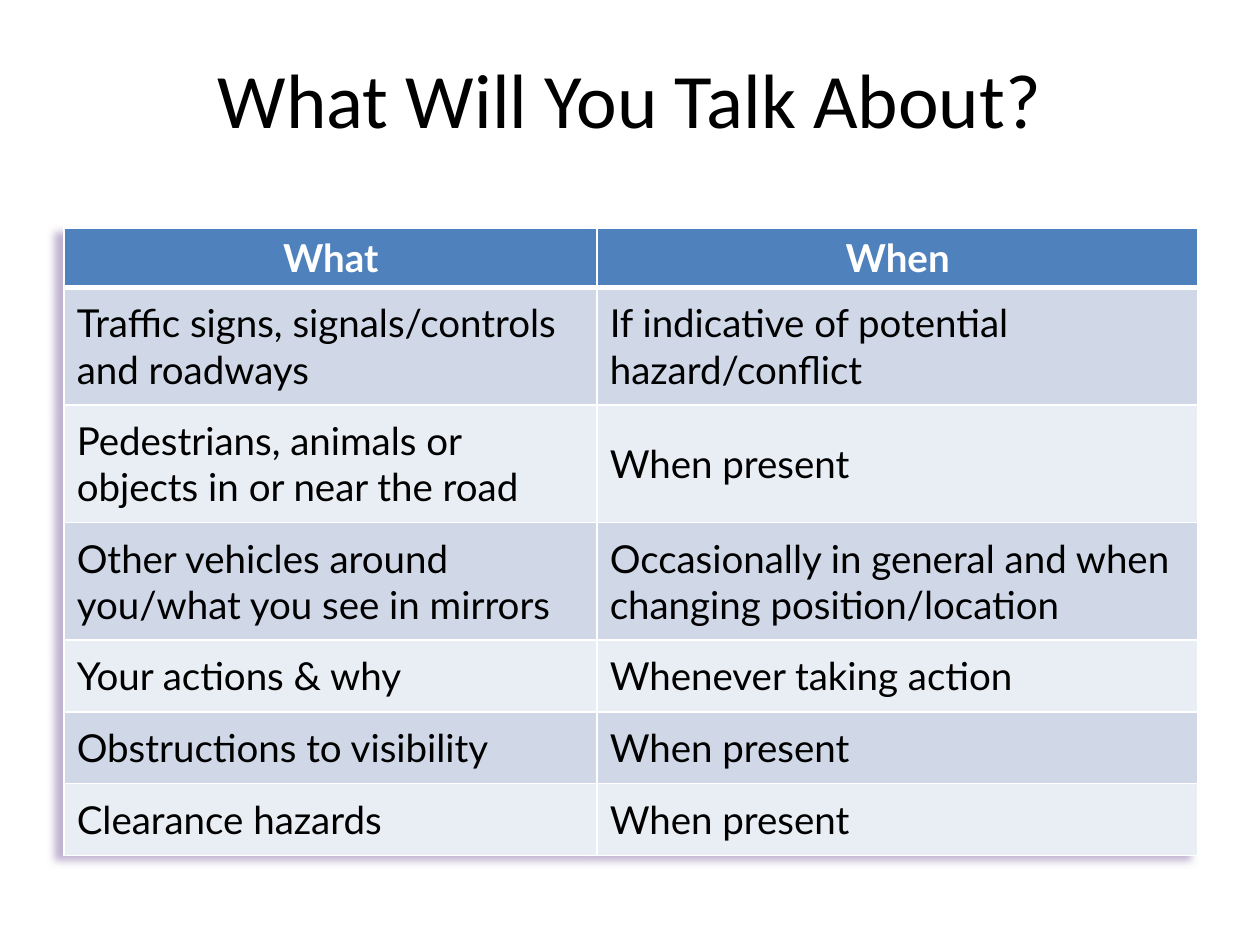
from dataclasses import dataclass

from lxml import etree
from pptx import Presentation
from pptx import util as u
from pptx.dml.color import RGBColor
from pptx.enum import text
from pptx.oxml.ns import qn


@dataclass(frozen=True)
class Theme:
    black: str = "000000"
    white: str = "FFFFFF"
    header: str = "4F81BD"
    bands: tuple = ("D0D8E8", "E9EDF4")
    shadow: str = "8064A2"
    title_font: str = "Calibri"
    body_font: str = "Lato"
    title_size: int = 44
    body_size: int = 22


class Deck:
    """Holds the theme and current slide, and adds each kind of element."""

    def __init__(self, theme):
        self.theme = theme
        self.prs = Presentation()
        self.prs.slide_width, self.prs.slide_height = u.Inches(10), u.Inches(7.5)
        self.s = self.prs.slides.add_slide(self.prs.slide_layouts[6])

    def add_words(self, tf, words, color, align, **fmt):
        p = tf.paragraphs[0]
        p.alignment = align
        r = p.add_run()
        r.text = words
        for name, value in fmt.items():
            setattr(r.font, name, value)
        r.font.color.rgb = RGBColor.from_string(color)

    def title(self, words, box):
        tf = self.s.shapes.add_textbox(*map(u.Inches, box)).text_frame
        tf.word_wrap = True
        tf.vertical_anchor = text.MSO_ANCHOR.MIDDLE
        self.add_words(tf, words, self.theme.black, text.PP_ALIGN.CENTER,
                       name=self.theme.title_font, size=u.Pt(self.theme.title_size))

    def borders(self, cell, bottom):
        tc_pr = cell._tc.get_or_add_tcPr()
        for i, (side, width) in enumerate(zip("LRTB", (1, 1, 1, bottom))):
            ln = etree.Element(qn(f"a:ln{side}"), w=str(u.Pt(width)))
            fill = etree.SubElement(ln, qn("a:solidFill"))
            etree.SubElement(fill, qn("a:srgbClr"), val=self.theme.white)
            tc_pr.insert(i, ln)

    def table_shadow(self, table):
        effects = etree.Element(qn("a:effectLst"))
        shadow = etree.SubElement(effects, qn("a:outerShdw"), blurRad="50800",
                                  dist=str(u.Inches(0.08)), dir="9000000",
                                  algn="tr", rotWithShape="0")
        color = etree.SubElement(shadow, qn("a:srgbClr"), val=self.theme.shadow)
        etree.SubElement(color, qn("a:alpha"), val="50000")
        table._tbl.tblPr.insert(0, effects)

    def cell(self, cell, words, row):
        t, head = self.theme, row == 0
        fmt = {"vertical_anchor": text.MSO_ANCHOR.MIDDLE}
        if not head:
            sides = ("left", "right", "top", "bottom")
            fmt.update({f"margin_{side}": u.Inches(0.1) for side in sides})
        for name, value in fmt.items():
            setattr(cell, name, value)
        cell.fill.solid()
        cell.fill.fore_color.rgb = RGBColor.from_string(
            t.header if head else t.bands[(row - 1) % 2])
        self.borders(cell, 3 if head else 1)
        self.add_words(cell.text_frame, words, t.white if head else t.black,
                       text.PP_ALIGN.CENTER if head else text.PP_ALIGN.LEFT,
                       name=t.body_font, size=u.Pt(t.body_size), bold=head)

    def table(self, rows, left, top, widths, heights):
        box = map(u.Inches, (left, top, sum(widths), sum(heights)))
        table = self.s.shapes.add_table(len(rows), len(widths), *box).table
        self.table_shadow(table)
        for column, width in zip(table.columns, widths):
            column.width = u.Inches(width)
        for i, (row, height) in enumerate(zip(rows, heights)):
            table.rows[i].height = u.Inches(height)
            for j, words in enumerate(row):
                self.cell(table.cell(i, j), words, i)


ROWS = [
    ("What", "When"),
    ("Traffic signs, signals/controls and roadways",
     "If indicative of potential hazard/conflict"),
    ("Pedestrians, animals or objects in or near the road", "When present"),
    ("Other vehicles around you/what you see in mirrors",
     "Occasionally in general and when changing position/location"),
    ("Your actions & why", "Whenever taking action"),
    ("Obstructions to visibility", "When present"),
    ("Clearance hazards", "When present"),
]


def main():
    deck = Deck(Theme())
    deck.title("What Will You Talk About?", (0.5, 0.15, 9, 1.25))
    heights = [0.47] + [0.93] * 3 + [0.57] * 3
    deck.table(ROWS, 0.51, 1.81, (4.23, 4.77), heights)
    deck.prs.save("out.pptx")


if __name__ == "__main__":
    main()
